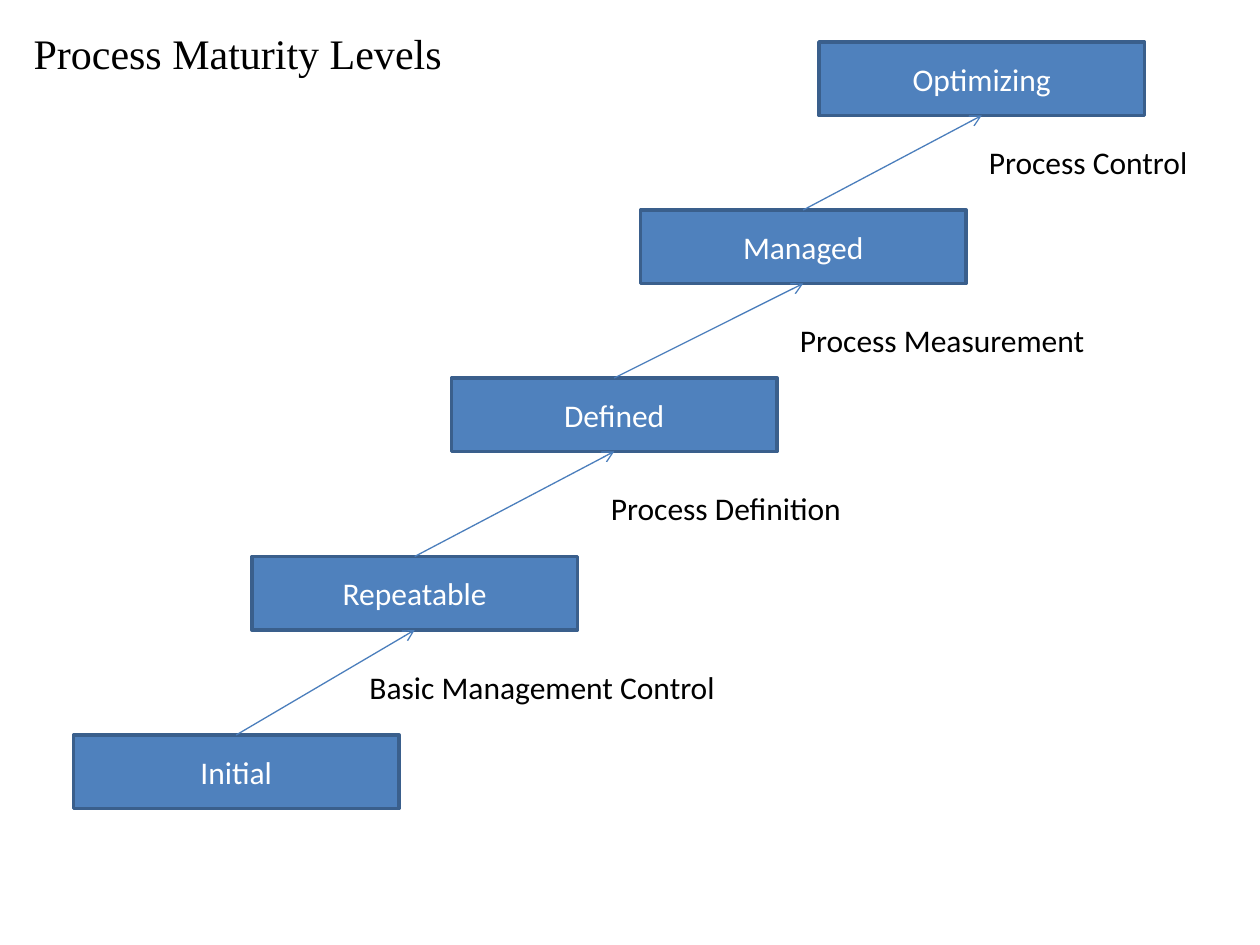
from dataclasses import dataclass

from lxml import etree
from pptx import Presentation
from pptx.dml.color import RGBColor
from pptx.enum.shapes import MSO_CONNECTOR, MSO_SHAPE
from pptx.enum.text import MSO_ANCHOR, MSO_AUTO_SIZE, PP_ALIGN
from pptx.oxml.ns import qn
from pptx.util import Inches, Pt

RECT = MSO_SHAPE.RECTANGLE
LINE = MSO_CONNECTOR.STRAIGHT
LEFT, MID, JUST = PP_ALIGN.LEFT, PP_ALIGN.CENTER, PP_ALIGN.JUSTIFY
TOP, CENTER = MSO_ANCHOR.TOP, MSO_ANCHOR.MIDDLE
FIXED = MSO_AUTO_SIZE.NONE
TOP_SIDE, LOW_SIDE = 0, 2

# Grid of 120 columns and 90 rows on the slide
COLS, ROWS = 120, 90
WIDE, HIGH = Inches(10), Inches(7.5)
BOX_W, BOX_H, TEXT_H = 31, 7, 4.8


@dataclass(frozen=True)
class Theme:
    fill: str = "4F81BD"
    edge: str = "3A5F8C"
    arrow: str = "4B7EBC"
    light: str = "FFFFFF"
    dark: str = "000000"
    body: str = "Calibri"
    head: str = "Times New Roman"
    size: float = 18
    title: float = 24
    border: float = 2
    thin: float = 0.75


@dataclass(frozen=True)
class Level:
    name: str
    col: float
    row: float


@dataclass(frozen=True)
class Step:
    text: str
    col: float
    row: float
    width: float = 38


THEME = Theme()

# Levels from lowest to highest, and the step between each pair
LEVELS = [
    Level("Initial", 7, 70),
    Level("Repeatable", 24, 53),
    Level("Defined", 43, 36),
    Level("Managed", 61, 20),
    Level("Optimizing", 78, 4),
]
STEPS = [
    Step("Basic Management Control", 34, 63),
    Step("Process Definition", 57, 46),
    Step("Process Measurement", 75, 30),
    Step("Process Control", 93, 13, 23),
]


def area(col: float, row: float, width: float, height: float) -> tuple:
    """Turn grid columns and rows into slide lengths."""
    across, down = WIDE / COLS, HIGH / ROWS
    return (round(col * across), round(row * down),
            round(width * across), round(height * down))


def write(shape, text: str, *, font=THEME.body, size=THEME.size,
          color=THEME.dark, align=LEFT, anchor=TOP) -> None:
    frame = shape.text_frame
    frame.word_wrap = True
    frame.auto_size = FIXED
    frame.vertical_anchor = anchor
    para = frame.paragraphs[0]
    para.alignment = align
    run = para.add_run()
    run.text = text
    run.font.name = font
    run.font.size = Pt(size)
    run.font.color.rgb = RGBColor.from_string(color)


def add_title(slide, text: str) -> None:
    title = slide.shapes.title
    title.left, title.top, title.width, title.height = area(2, 2, 116, 86)
    write(title, text, font=THEME.head, size=THEME.title, align=JUST)


def add_level(slide, level: Level):
    box = slide.shapes.add_shape(
        RECT, *area(level.col, level.row, BOX_W, BOX_H))
    box.shadow.inherit = False
    box.fill.solid()
    box.fill.fore_color.rgb = RGBColor.from_string(THEME.fill)
    box.line.color.rgb = RGBColor.from_string(THEME.edge)
    box.line.width = Pt(THEME.border)
    write(box, level.name, color=THEME.light, align=MID, anchor=CENTER)
    return box


def add_arrow(slide, low, high) -> None:
    """Join the top of one box to the bottom of the next."""
    arrow = slide.shapes.add_connector(LINE, 0, 0, 0, 0)
    arrow.begin_connect(low, TOP_SIDE)
    arrow.end_connect(high, LOW_SIDE)
    arrow.line.color.rgb = RGBColor.from_string(THEME.arrow)
    arrow.line.width = Pt(THEME.thin)
    etree.SubElement(arrow.line._get_or_add_ln(), qn("a:tailEnd"), type="arrow")
    etree.SubElement(arrow._element.spPr, qn("a:effectLst"))


def add_step(slide, step: Step) -> None:
    label = slide.shapes.add_textbox(
        *area(step.col, step.row, step.width, TEXT_H))
    write(label, step.text)


def main() -> None:
    deck = Presentation()
    deck.slide_width, deck.slide_height = WIDE, HIGH
    slide = deck.slides.add_slide(deck.slide_layouts[5])

    add_title(slide, "Process Maturity Levels")
    boxes = [add_level(slide, level) for level in LEVELS]
    for low, high in zip(boxes, boxes[1:]):
        add_arrow(slide, low, high)
    for step in STEPS:
        add_step(slide, step)

    deck.save("out.pptx")


if __name__ == "__main__":
    main()
